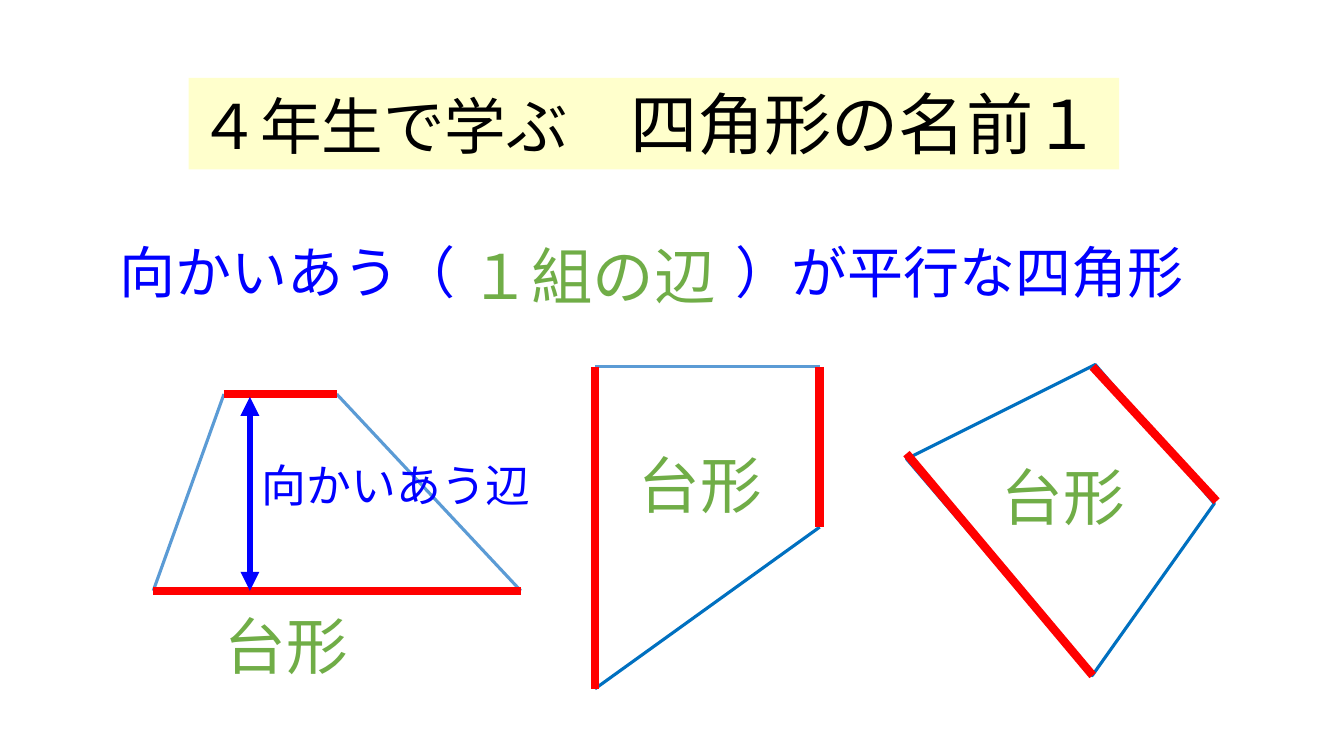
from lxml import etree
from pptx import Presentation
from pptx import util as u
from pptx.dml import color
from pptx.enum import shapes, text
from pptx.oxml import ns

BLACK, BLUE, GREEN, RED = "000000", "0000FF", "70AD47", "FF0000"
LIGHT, DARK = "5B9BD5", "0070C0"
CREAM, WHITE = "FFFFCC", "FFFFFF"


def rgb(value):
    return color.RGBColor.from_string(value)


class Lesson:
    """Hold the lesson style and draw elements on the current page."""

    font = "Noto Sans CJK JP"
    edge_width = 2.25
    parallel_width = 6

    def __init__(self, width, height):
        self.deck = Presentation()
        self.deck.slide_width = u.Pt(width)
        self.deck.slide_height = u.Pt(height)
        self.page = self.deck.slides.add_slide(self.deck.slide_layouts[6])

    def label(self, left, top, width, height, runs, ink, fill=None, tab=None):
        area = [u.Pt(n) for n in (left, top, width, height)]
        if fill:
            box = self.page.shapes.add_shape(shapes.MSO_SHAPE.RECTANGLE, *area)
            box.shadow.inherit = False
            box.fill.solid()
            box.fill.fore_color.rgb = rgb(fill)
            box.line.fill.background()
        else:
            box = self.page.shapes.add_textbox(*area)
        frame = box.text_frame
        frame.word_wrap = True
        frame.auto_size = text.MSO_AUTO_SIZE.SHAPE_TO_FIT_TEXT
        frame.vertical_anchor = text.MSO_ANCHOR.TOP
        para = frame.paragraphs[0]
        para.alignment = text.PP_ALIGN.LEFT
        if tab:
            stops = etree.SubElement(para._p.get_or_add_pPr(), ns.qn("a:tabLst"))
            etree.SubElement(stops, ns.qn("a:tab"), pos=str(u.Pt(tab)), algn="l")
        for words, size in runs:
            span = para.add_run()
            span.text = words
            span.font.size = u.Pt(size)
            span.font.name = self.font
            span.font.color.rgb = rgb(ink)
            etree.SubElement(span.font._element, ns.qn("a:ea"), typeface=self.font)

    def line(self, start, end, ink, width, heads=False, parent=None):
        target = parent or self.page
        ends = [u.Pt(n) for n in (*start, *end)]
        edge = target.shapes.add_connector(shapes.MSO_CONNECTOR.STRAIGHT, *ends)
        edge.line.color.rgb = rgb(ink)
        edge.line.width = u.Pt(width)
        if heads:
            for tag in ("a:headEnd", "a:tailEnd"):
                etree.SubElement(edge.line._get_or_add_ln(), ns.qn(tag), type="triangle")
        etree.SubElement(edge._element.spPr, ns.qn("a:effectLst"))

    def outline(self, corners, inks):
        group = self.page.shapes.add_group_shape()
        for start, end, ink in zip(corners, corners[1:] + corners[:1], inks):
            self.line(start, end, ink, self.edge_width, parent=group)

    def trapezoid(self, left, top, width, height, turn):
        area = [u.Pt(n) for n in (left, top, width, height)]
        shape = self.page.shapes.add_shape(shapes.MSO_SHAPE.TRAPEZOID, *area)
        shape.shadow.inherit = False
        shape.rotation = turn
        shape.fill.solid()
        shape.fill.fore_color.rgb = rgb(WHITE)
        shape.line.color.rgb = rgb(DARK)
        shape.line.width = u.Pt(self.edge_width)


def main():
    lesson = Lesson(960, 540)
    lesson.label(134.8, 55.6, 664.6, 65.5,
                 [("４年生で学ぶ　", 44), ("四角形の名前１", 48)], BLACK, fill=CREAM)
    lesson.label(78.5, 166.3, 782, 55.7,
                 [("向かいあう（\t）が平行な四角形", 40)], BLUE, tab=440)

    flat = [(160, 281.5), (109.5, 422), (372, 422), (240.5, 281.5)]
    upright = [(425, 262), (425, 492), (585.5, 376.5), (585.5, 262)]
    tilted = [(780.5, 262), (647.5, 324), (780.5, 482.5), (869, 358)]
    lesson.outline(flat, [LIGHT, DARK, LIGHT, DARK])
    lesson.outline(upright, [LIGHT, DARK, DARK, LIGHT])
    lesson.trapezoid(667.5, 284.5, 203.8, 146.2, 49.4)

    for left, top in ((153.4, 430.6), (449.3, 316), (708.5, 324)):
        lesson.label(left, top, 104, 60.6, [("台形", 44)], GREEN)

    parallels = [(flat[0], flat[3]), (flat[1], flat[2]),
                 (upright[0], upright[1]), (upright[3], upright[2]),
                 (tilted[1], tilted[2]), (tilted[0], tilted[3])]
    for start, end in parallels:
        lesson.line(start, end, RED, lesson.parallel_width)

    lesson.line((178.5, 283.5), (178.5, 422), BLUE, 4.5, heads=True)
    lesson.label(180, 323.3, 208.4, 46, [("向かいあう辺", 32)], BLUE)
    lesson.label(328.3, 166.3, 192.4, 60.6, [("１組の辺", 44)], GREEN)
    lesson.deck.save("out.pptx")


if __name__ == "__main__":
    main()
